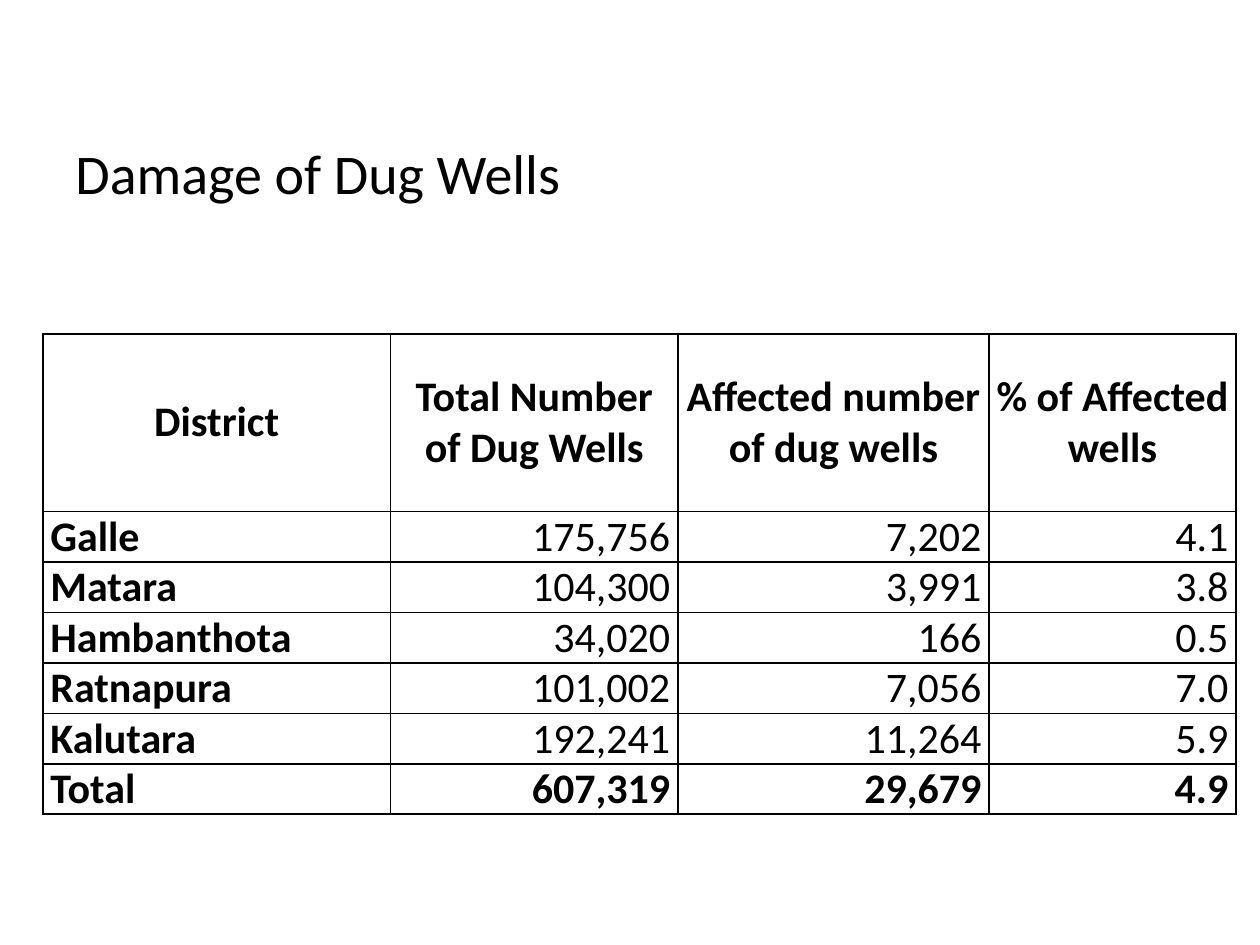
import pptx
import pptx.dml.color
import pptx.enum.text
import pptx.oxml
import pptx.oxml.ns
import pptx.util
from pptx.util import Inches

COLORS = {"ink": "000000", "paper": "FFFFFF"}
FONT = "Calibri"
ALIGN = pptx.enum.text.PP_ALIGN
ANCHOR = pptx.enum.text.MSO_ANCHOR

COLUMN_WIDTHS = [2.76, 2.28, 2.47, 1.96]
HEADER_HEIGHT, ROW_HEIGHT = 1.41, 0.4
ROWS = [
    ["District", "Total Number of Dug Wells", "Affected number of dug wells",
     "% of Affected wells"],
    ["Galle", "175,756", "7,202", "4.1"],
    ["Matara", "104,300", "3,991", "3.8"],
    ["Hambanthota", "34,020", "166", "0.5"],
    ["Ratnapura", "101,002", "7,056", "7.0"],
    ["Kalutara", "192,241", "11,264", "5.9"],
    ["Total", "607,319", "29,679", "4.9"],
]


def rgb(name):
    return pptx.dml.color.RGBColor.from_string(COLORS[name])


def add_span(para, text, size, bold=False):
    span = para.add_run()
    span.text = text
    span.font.name = FONT
    span.font.size = pptx.util.Pt(size)
    span.font.bold = bold
    span.font.color.rgb = rgb("ink")


def add_heading(page, text):
    box = page.shapes.add_textbox(Inches(0.5), Inches(1.05), Inches(9), Inches(0.65))
    box.text_frame.word_wrap = True
    add_span(box.text_frame.paragraphs[0], text, 32)


def add_borders(cell):
    """Draw a 1 pt line on all four sides; lines must precede the fill."""
    properties = cell._tc.get_or_add_tcPr()
    for index, side in enumerate(("lnL", "lnR", "lnT", "lnB")):
        line = pptx.oxml.parse_xml(
            f'<a:{side} {pptx.oxml.ns.nsdecls("a")} w="12700"><a:solidFill>'
            f'<a:srgbClr val="{COLORS["ink"]}"/></a:solidFill></a:{side}>')
        properties.insert(index, line)


def fill_cell(cell, text, align, bold):
    cell.fill.solid()
    cell.fill.fore_color.rgb = rgb("paper")
    cell.vertical_anchor = ANCHOR.MIDDLE
    cell.margin_left = cell.margin_right = Inches(0.06)
    cell.margin_top = cell.margin_bottom = 0
    para = cell.text_frame.paragraphs[0]
    para.alignment = align
    add_span(para, text, 24, bold)
    add_borders(cell)


def add_wells_table(page):
    height = HEADER_HEIGHT + ROW_HEIGHT * (len(ROWS) - 1)
    frame = page.shapes.add_table(
        len(ROWS), len(COLUMN_WIDTHS), Inches(0.34), Inches(2.65),
        Inches(sum(COLUMN_WIDTHS)), Inches(height))
    table = frame.table
    table.horz_banding = False
    for column, width in zip(table.columns, COLUMN_WIDTHS):
        column.width = Inches(width)

    last = len(ROWS) - 1
    for r, values in enumerate(ROWS):
        table.rows[r].height = Inches(ROW_HEIGHT if r else HEADER_HEIGHT)
        for c, text in enumerate(values):
            if r == 0:
                align = ALIGN.CENTER
            else:
                align = ALIGN.RIGHT if c else ALIGN.LEFT
            # Header, total and district names are bold
            fill_cell(table.cell(r, c), text, align, r in (0, last) or c == 0)


def main():
    deck = pptx.Presentation()
    deck.slide_width, deck.slide_height = Inches(10), Inches(7.5)
    page = deck.slides.add_slide(deck.slide_layouts[6])
    page.background.fill.solid()
    page.background.fill.fore_color.rgb = rgb("paper")

    # Heading
    add_heading(page, "Damage of Dug Wells")
    # Wells by district
    add_wells_table(page)

    deck.save("out.pptx")


if __name__ == "__main__":
    main()
